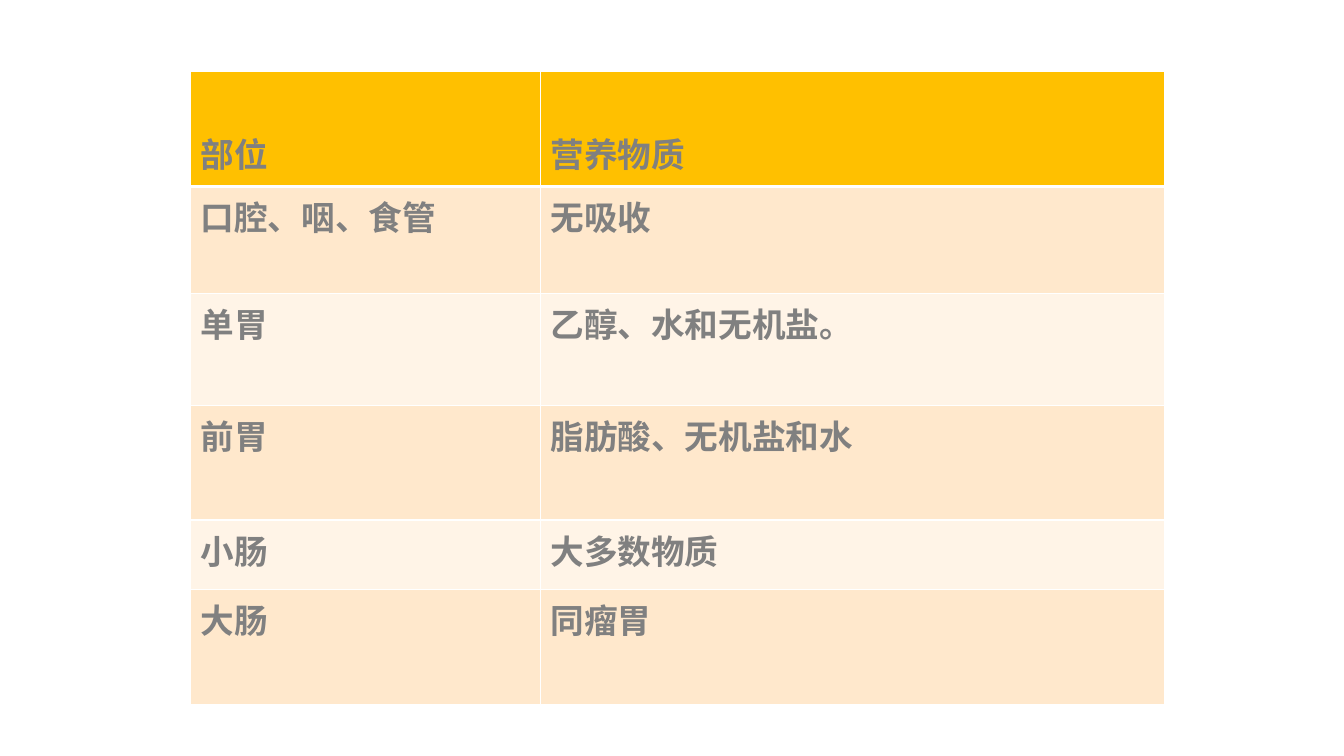
from dataclasses import dataclass

from lxml.etree import SubElement
from pptx import Presentation
from pptx.dml.color import RGBColor
from pptx.enum.text import MSO_ANCHOR as Anchor
from pptx.oxml.ns import qn
from pptx.table import _Cell as Cell
from pptx.util import Inches, Pt

COLORS = {
    "header": "FFC000",
    "band_dark": "FFE8CC",
    "band_light": "FFF4E7",
    "border": "FFFFFF",
    "text": "808080",
}
FONT = "Noto Sans CJK SC"
COLUMN_WIDTHS = (3.47, 6.19)


@dataclass
class AbsorptionRow:
    site: str
    nutrients: str
    height: float


ROWS = [
    AbsorptionRow("部位", "营养物质", 1.14),
    AbsorptionRow("口腔、咽、食管", "无吸收", 1.06),
    AbsorptionRow("单胃", "乙醇、水和无机盐。", 1.11),
    AbsorptionRow("前胃", "脂肪酸、无机盐和水", 1.14),
    AbsorptionRow("小肠", "大多数物质", 0.69),
    AbsorptionRow("大肠", "同瘤胃", 1.14),
]


def write_text(cell: Cell, text: str, *, size: float = 24, bold: bool = True,
               color: str = "text", anchor: Anchor = Anchor.TOP,
               bottom: float = 0.05) -> None:
    cell.vertical_anchor = anchor
    cell.margin_left = cell.margin_right = Inches(0.1)
    cell.margin_top = Inches(0.05)
    cell.margin_bottom = Inches(bottom)
    run = cell.text_frame.paragraphs[0].add_run()
    run.text = text
    run.font.size = Pt(size)
    run.font.bold = bold
    run.font.name = FONT
    run.font.color.rgb = RGBColor.from_string(COLORS[color])
    SubElement(run.font._element, qn("a:ea"), typeface=FONT)


def draw_borders(cell: Cell, top: float, bottom: float) -> None:
    properties = cell._tc.get_or_add_tcPr()
    widths = {"a:lnL": 1, "a:lnR": 1, "a:lnT": top, "a:lnB": bottom}
    for side, width in widths.items():
        line = SubElement(properties, qn(side), w=str(Pt(width)))
        fill = SubElement(line, qn("a:solidFill"))
        SubElement(fill, qn("a:srgbClr"), val=COLORS["border"])


def fill_cell(cell: Cell, color: str) -> None:
    cell.fill.solid()
    cell.fill.fore_color.rgb = RGBColor.from_string(COLORS[color])


def main() -> None:
    presentation = Presentation()
    presentation.slide_width = Inches(13.33)
    presentation.slide_height = Inches(7.5)
    slide = presentation.slides.add_slide(presentation.slide_layouts[6])

    table = slide.shapes.add_table(
        len(ROWS), len(COLUMN_WIDTHS), Inches(1.89), Inches(0.71),
        Inches(sum(COLUMN_WIDTHS)), Inches(sum(row.height for row in ROWS)),
    ).table
    for column, width in zip(table.columns, COLUMN_WIDTHS):
        column.width = Inches(width)

    for index, row in enumerate(ROWS):
        table.rows[index].height = Inches(row.height)
        is_header = index == 0
        band = "band_dark" if index % 2 else "band_light"
        for column, text in enumerate((row.site, row.nutrients)):
            cell = table.cell(index, column)
            draw_borders(cell, top=3 if index == 1 else 1,
                         bottom=3 if is_header else 1)
            fill_cell(cell, "header" if is_header else band)
            if is_header:
                write_text(cell, text, anchor=Anchor.BOTTOM, bottom=0.09)
            else:
                write_text(cell, text)

    presentation.save("out.pptx")


if __name__ == "__main__":
    main()
